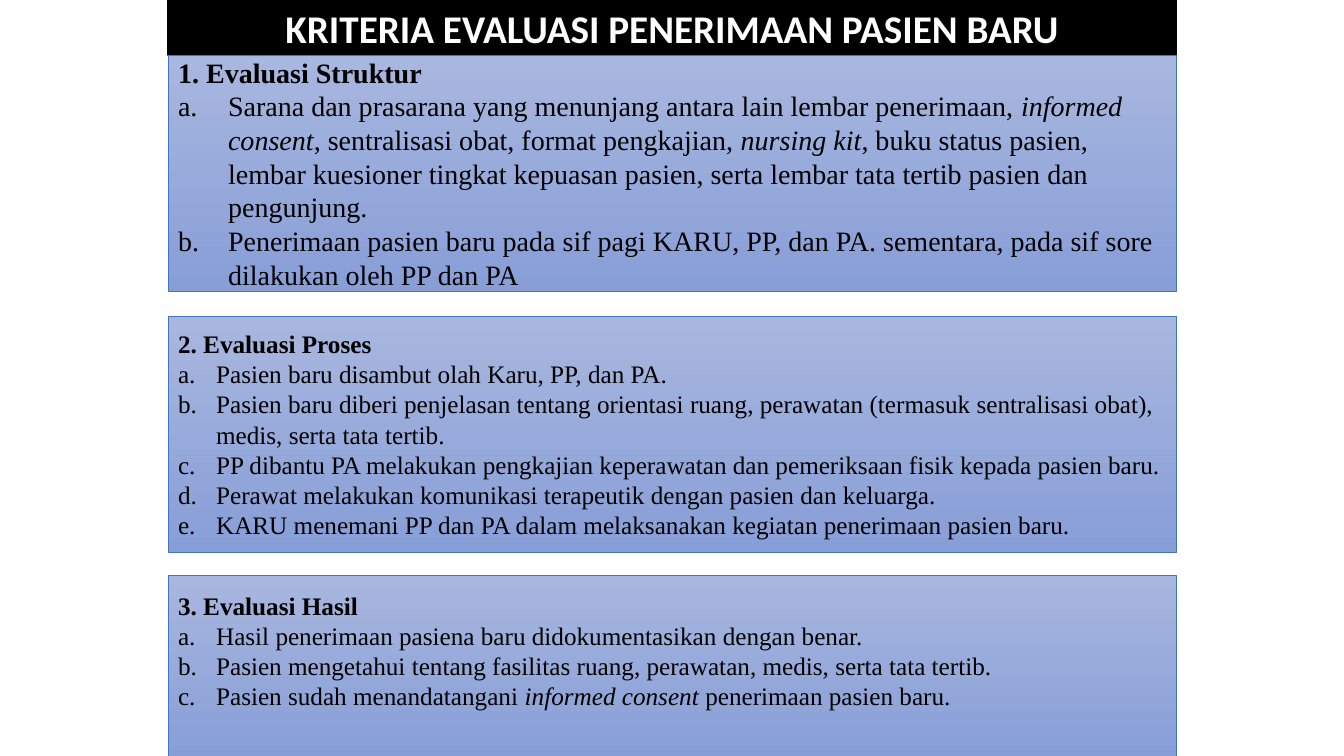
from lxml import etree
from pptx import Presentation
from pptx.dml.color import RGBColor
from pptx.enum.text import MSO_ANCHOR, MSO_AUTO_SIZE, PP_ALIGN
from pptx.oxml.ns import qn
from pptx.util import Emu, Pt

EMU_PER_PX = 914400 / 100.8
MIDDLE = MSO_ANCHOR.MIDDLE
NO_AUTOFIT = MSO_AUTO_SIZE.NONE
LEFT, CENTER = PP_ALIGN.LEFT, PP_ALIGN.CENTER
COMPARISON_LAYOUT = 4
COLORS = {
    "banner": "000000",
    "banner_text": "FFFFFF",
    "panel_top": "A8B7DF",
    "panel_bottom": "889ED7",
    "panel_line": "4472C4",
    "text": "000000",
}
PANEL_LEFT, PANEL_WIDTH = 168, 1008
BANNER_HEIGHT = 55

PANELS = [
    {
        "top": 55, "height": 236, "size": 20, "indent": 50, "bottom_inset": 5,
        "heading": "1. Evaluasi Struktur",
        "items": [
            ["Sarana dan prasarana yang menunjang antara lain lembar penerimaan, ",
             "informed consent",
             ", sentralisasi obat, format pengkajian, ",
             "nursing kit",
             ", buku status pasien, lembar kuesioner tingkat kepuasan pasien, "
             "serta lembar tata tertib pasien dan pengunjung."],
            ["Penerimaan pasien baru pada sif pagi KARU, PP, dan PA. sementara, "
             "pada sif sore dilakukan oleh PP dan PA"],
        ],
    },
    {
        "top": 316, "height": 236, "size": 18, "indent": 38, "bottom_inset": 5,
        "heading": "2. Evaluasi Proses",
        "items": [
            ["Pasien baru disambut olah Karu, PP, dan PA."],
            ["Pasien baru diberi penjelasan tentang orientasi ruang, perawatan "
             "(termasuk sentralisasi obat), medis, serta tata tertib."],
            ["PP dibantu PA melakukan pengkajian keperawatan dan pemeriksaan fisik "
             "kepada pasien baru."],
            ["Perawat melakukan komunikasi terapeutik dengan pasien dan keluarga."],
            ["KARU menemani PP dan PA dalam melaksanakan kegiatan penerimaan pasien baru."],
        ],
    },
    {
        "top": 575, "height": 181, "size": 18, "indent": 38, "bottom_inset": 35,
        "heading": "3. Evaluasi Hasil",
        "items": [
            ["Hasil penerimaan pasiena baru didokumentasikan dengan benar."],
            ["Pasien mengetahui tentang fasilitas ruang, perawatan, medis, serta tata tertib."],
            ["Pasien sudah menandatangani ", "informed consent ", "penerimaan pasien baru."],
        ],
    },
]


def px(length):
    return Emu(round(length * EMU_PER_PX))


def rgb(name):
    return RGBColor.from_string(COLORS[name])


def place(shape, top, height):
    shape.left, shape.top = px(PANEL_LEFT), px(top)
    shape.width, shape.height = px(PANEL_WIDTH), px(height)
    frame = shape.text_frame
    frame.word_wrap = True
    frame.auto_size = NO_AUTOFIT
    frame.vertical_anchor = MIDDLE
    return frame


def style_paragraph(paragraph, font_name, size, color, bold, alignment):
    paragraph.alignment = alignment
    paragraph.space_before = Pt(0)
    font = paragraph.font
    font.name, font.size, font.bold, font.italic = font_name, Pt(size), bold, False
    font.color.rgb = rgb(color)


def set_bullet(paragraph, indent, numbering=None):
    properties = paragraph._p.get_or_add_pPr()
    properties.set("marL", str(px(indent)))
    properties.set("indent", str(-px(indent)))
    if numbering:
        etree.SubElement(properties, qn("a:buFont"), typeface="+mj-lt")
        etree.SubElement(properties, qn("a:buAutoNum"), type=numbering)
    else:
        etree.SubElement(properties, qn("a:buNone"))


def fill_banner(title):
    frame = place(title, 0, BANNER_HEIGHT)
    title.fill.solid()
    title.fill.fore_color.rgb = rgb("banner")
    title.line.color.rgb = rgb("banner")
    title.line.width = Pt(1)
    frame.text = "KRITERIA EVALUASI PENERIMAAN PASIEN BARU"
    style_paragraph(frame.paragraphs[0], "Calibri", 28, "banner_text", True, CENTER)


def paint_panel(shape):
    shape.fill.gradient()
    shape.fill.gradient_angle = 270
    for stop, color in zip(shape.fill.gradient_stops, ("panel_top", "panel_bottom")):
        stop.color.rgb = rgb(color)
    shape.line.color.rgb = rgb("panel_line")
    shape.line.width = Pt(0.5)


def fill_panel(shape, panel):
    frame = place(shape, panel["top"], panel["height"])
    frame.margin_bottom = px(panel["bottom_inset"])
    paint_panel(shape)
    heading = frame.paragraphs[0]
    heading.text = panel["heading"]
    set_bullet(heading, 0)
    style_paragraph(heading, "Times New Roman", panel["size"], "text", True, LEFT)
    for parts in panel["items"]:
        paragraph = frame.add_paragraph()
        set_bullet(paragraph, panel["indent"], "alphaLcPeriod")
        style_paragraph(paragraph, "Times New Roman", panel["size"], "text", False, LEFT)
        for position, part in enumerate(parts):
            run = paragraph.add_run()
            run.text = part
            if position % 2:
                run.font.italic = True


def main():
    presentation = Presentation()
    presentation.slide_width, presentation.slide_height = px(1344), px(756)
    slide = presentation.slides.add_slide(presentation.slide_layouts[COMPARISON_LAYOUT])
    title, *bodies = slide.placeholders
    fill_banner(title)
    for body, panel in zip(bodies, PANELS):
        fill_panel(body, panel)
    for unused in bodies[len(PANELS):]:
        unused.element.getparent().remove(unused.element)
    presentation.save("out.pptx")


if __name__ == "__main__":
    main()
